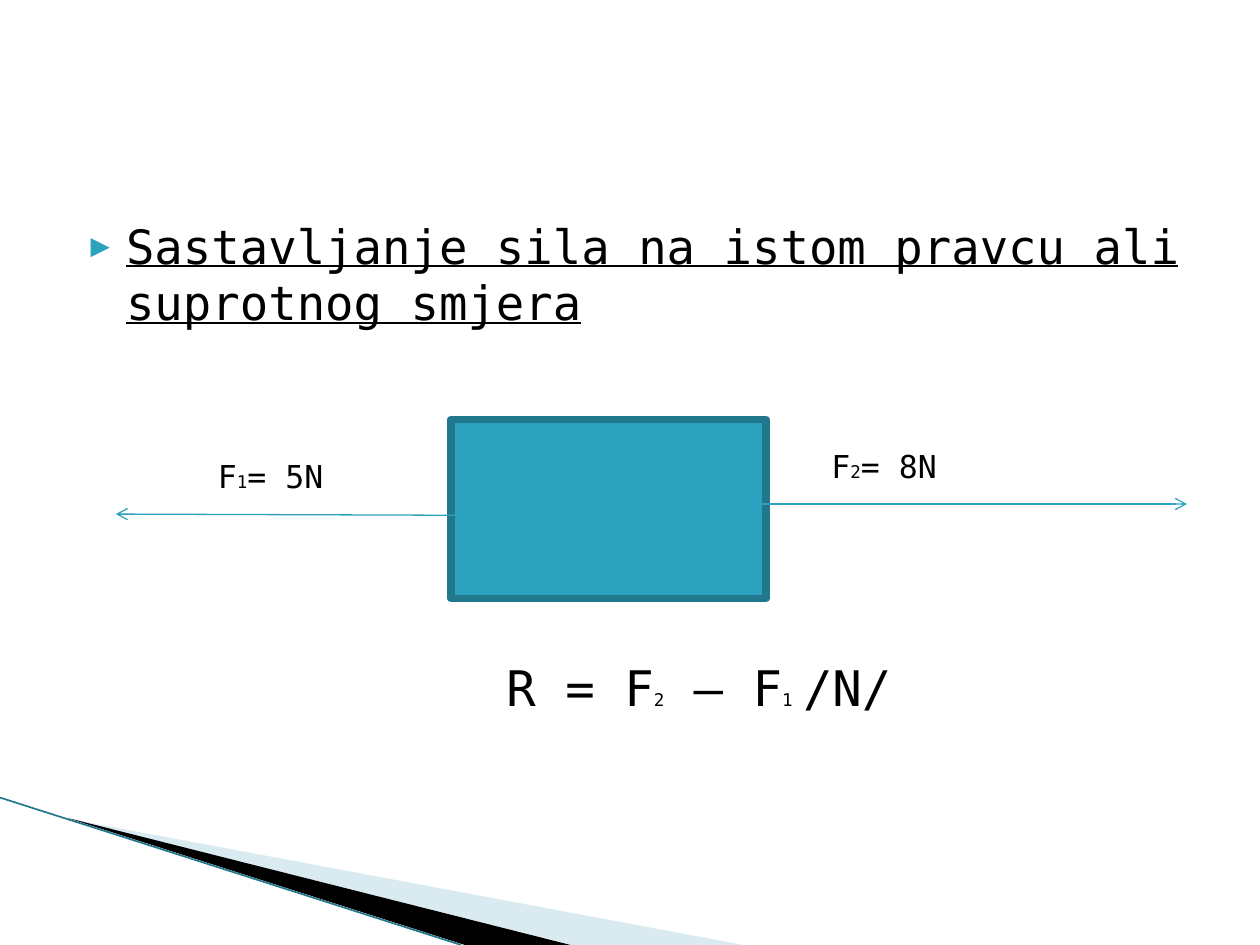
from lxml.etree import SubElement
from pptx import Presentation
from pptx.dml.color import RGBColor
from pptx.enum.shapes import MSO_CONNECTOR as CONNECTOR, MSO_SHAPE as SHAPE
from pptx.enum.text import MSO_ANCHOR as ANCHOR, MSO_AUTO_SIZE as AUTO_SIZE, PP_ALIGN as ALIGN
from pptx.oxml.ns import qn
from pptx.util import Inches, Pt

FONT = "DejaVu Sans Mono"
BLACK, TEAL, DARK_TEAL, PALE_TEAL = "000000", "2DA2BF", "21788D", "A0CBDC"

HEADING = "Sastavljanje sila na istom pravcu ali suprotnog smjera"
WEDGES = [
    ([(0.55, 6.5), (5.9, 7.5), (4.54, 7.5)], PALE_TEAL, 40),
    ([(0.53, 6.49), (4.53, 7.5), (3.69, 7.5)], BLACK, 100),
]
WEDGE_EDGE = ((0, 6.33), (3.66, 7.5))
BODY_BOX = (3.58, 3.33, 2.5, 1.42)
FORCES = [((3.75, 4.09), (0.92, 4.08)), ((5.83, 4), (9.42, 4))]
LABELS = [
    ((1.33, 3.58, 2.17, 0.4), 0.4, [("F", 18), ("1", 10), ("= 5N", 18)]),
    ((6.5, 3.5, 2.25, 0.4), 0.1, [("F", 18), ("2", 10), ("= 8N", 18)]),
    ((2.75, 5.17, 5.33, 0.57), 1.27,
     [("R = F", 28), ("2", 10), (" – F", 28), ("1 ", 10), ("/N/", 28)]),
]


def color(value):
    return RGBColor.from_string(value)


def inches(values):
    return [Inches(value) for value in values]


def add_child(parent, tag, **attributes):
    return SubElement(parent, qn(tag), attributes)


def fill_shape(shape, value, opacity=100):
    shape.shadow.inherit = False
    shape.fill.solid()
    shape.fill.fore_color.rgb = color(value)
    if opacity < 100:
        solid = shape.fill._xPr.find(qn("a:solidFill"))
        add_child(solid[0], "a:alpha", val=str(opacity * 1000))


def write(paragraph, text, size=18, underline=None):
    run = paragraph.add_run()
    run.text = text
    font = run.font
    font.name, font.size, font.underline = FONT, Pt(size), underline
    font.color.rgb = color(BLACK)


def add_line(slide, start, end, value, width, arrow=False):
    connector = slide.shapes.add_connector(
        CONNECTOR.STRAIGHT, *inches(start + end))
    connector.line.color.rgb = color(value)
    connector.line.width = Pt(width)
    if arrow:
        add_child(connector.line._get_or_add_ln(), "a:tailEnd", type="arrow")
    add_child(connector._element.spPr, "a:effectLst")


def add_wedge(slide, points, value, opacity):
    start, *others = [tuple(inches(point)) for point in points]
    builder = slide.shapes.build_freeform(*start)
    builder.add_line_segments(others)
    wedge = builder.convert_to_shape()
    fill_shape(wedge, value, opacity)
    wedge.line.fill.background()


def add_heading(placeholder):
    placeholder.left, placeholder.top, placeholder.width, placeholder.height = inches(
        (0.5, 1.62, 9, 4.95))
    frame = placeholder.text_frame
    frame.margin_top = Inches(0.1)
    frame.vertical_anchor = ANCHOR.TOP
    frame.auto_size = AUTO_SIZE.NONE
    paragraph = frame.paragraphs[0]
    paragraph.space_before = Pt(0)
    paragraph.alignment = ALIGN.LEFT
    properties = paragraph._p.get_or_add_pPr()
    properties.set("marL", str(Inches(0.4)))
    properties.set("indent", str(Inches(-0.28)))
    add_child(add_child(properties, "a:buClr"), "a:srgbClr", val=TEAL)
    add_child(properties, "a:buSzPct", val="68000")
    add_child(properties, "a:buFont", typeface=FONT)
    add_child(properties, "a:buChar", char="▶")
    write(paragraph, HEADING, size=27, underline=True)


def add_label(slide, box, inset, parts):
    frame = slide.shapes.add_textbox(*inches(box)).text_frame
    frame.word_wrap = True
    frame.auto_size = AUTO_SIZE.SHAPE_TO_FIT_TEXT
    frame.margin_left = Inches(inset)
    for text, size in parts:
        write(frame.paragraphs[0], text, size=size)


def main():
    presentation = Presentation()
    presentation.slide_width, presentation.slide_height = Inches(10), Inches(7.5)
    slide = presentation.slides.add_slide(presentation.slide_layouts[1])
    title = slide.shapes.title._element
    title.getparent().remove(title)

    add_heading(slide.placeholders[1])
    for points, value, opacity in WEDGES:
        add_wedge(slide, points, value, opacity)
    add_line(slide, *WEDGE_EDGE, DARK_TEAL, 0.95)

    body = slide.shapes.add_shape(SHAPE.RECTANGLE, *inches(BODY_BOX))
    fill_shape(body, TEAL)
    body.line.color.rgb = color(DARK_TEAL)
    body.line.width = Pt(4.33)
    add_child(body.line._get_or_add_ln(), "a:round")

    for start, end in FORCES:
        add_line(slide, start, end, TEAL, 0.75, arrow=True)
    for box, inset, parts in LABELS:
        add_label(slide, box, inset, parts)
    presentation.save("out.pptx")


if __name__ == "__main__":
    main()
